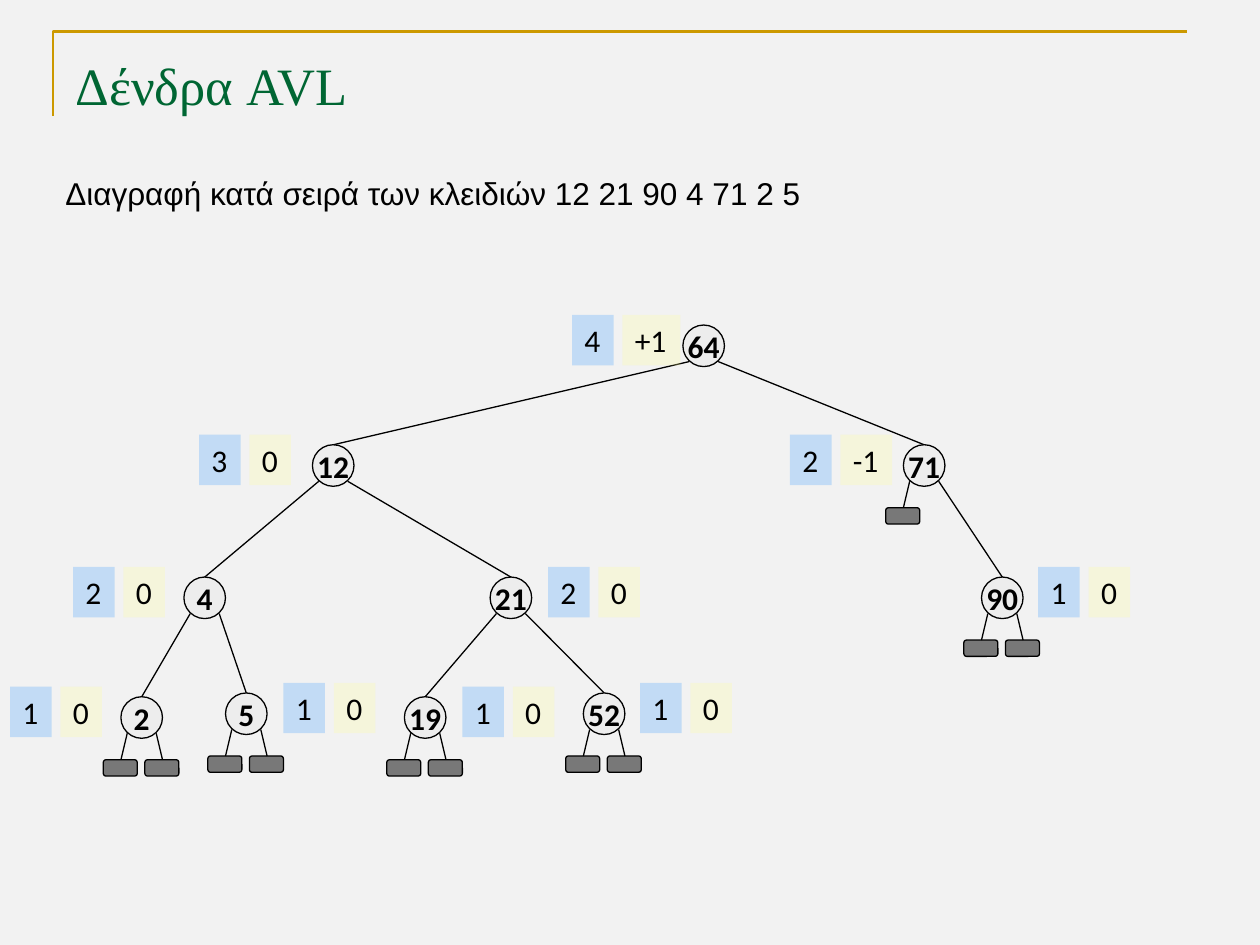
import lxml.etree
import pptx
import pptx.dml.color
import pptx.enum.shapes
import pptx.enum.text
import pptx.oxml.ns
import pptx.util

Inches = pptx.util.Inches
Pt = pptx.util.Pt
qn = pptx.oxml.ns.qn
SHAPE = pptx.enum.shapes.MSO_SHAPE
ALIGN = pptx.enum.text.PP_ALIGN
ANCHOR = pptx.enum.text.MSO_ANCHOR
FIT = pptx.enum.text.MSO_AUTO_SIZE

SIZE, DROP = 0.33, 0.5
FEET = (0.05, 0.28)

# key: left, top, height, balance, tag offset, left child, right child
TREE = {
    "64": (5.34, 0.08, "4", "+1", -0.88, "12", "71"),
    "12": (2.4, 1.03, "3", "0", -0.9, "4", "21"),
    "71": (7.09, 1.03, "2", "-1", -0.9, None, "90"),
    "4": (1.38, 2.08, "2", "0", -0.88, "2", "5"),
    "21": (3.81, 2.08, "2", "0", 0.46, "19", "52"),
    "90": (7.71, 2.08, "1", "0", 0.45, None, None),
    "2": (0.88, 3.03, "1", "0", -0.88, None, None),
    "5": (1.71, 3.0, "1", "0", 0.46, None, None),
    "19": (3.13, 3.03, "1", "0", 0.46, None, None),
    "52": (4.55, 3.0, "1", "0", 0.45, None, None),
}
WIDTHS = {"0": 0.33, "+1": 0.46, "-1": 0.41}


def paint(target, color, alpha=100):
    """Fill a shape, line or background with a hex colour."""
    target.fill.solid()
    target.fill.fore_color.rgb = pptx.dml.color.RGBColor.from_string(color)
    if alpha < 100:
        tone = target._element.spPr.find(qn("a:solidFill"))[0]
        lxml.etree.SubElement(tone, qn("a:alpha")).set("val", str(alpha * 1000))


def write(shape, text, size, face, color="000000", bold=False):
    """Put one line of styled text in a shape."""
    frame = shape.text_frame
    frame.text = text
    frame.word_wrap = False
    font = frame.paragraphs[0].runs[0].font
    font.size, font.name, font.bold = Pt(size), face, bold
    paint(font, color)
    return frame


def block(slide, kind, x, y, w, h, color, alpha, edge=True):
    """Add a filled preset shape."""
    shape = slide.shapes.add_shape(kind, Inches(x), Inches(y), Inches(w), Inches(h))
    shape.shadow.inherit = False
    paint(shape, color, alpha)
    if edge:
        paint(shape.line, "000000")
        shape.line.width = Pt(0.75)
    else:
        shape.line.fill.background()
    return shape


def link(slide, x1, y1, x2, y2):
    """Draw a thin branch between two points."""
    line = slide.shapes.add_connector(
        pptx.enum.shapes.MSO_CONNECTOR.STRAIGHT,
        Inches(x1), Inches(y1), Inches(x2), Inches(y2))
    paint(line.line, "000000")
    line.line.width = Pt(0.75)
    lxml.etree.SubElement(line._element.spPr, qn("a:effectLst"))


def tag(slide, x, y, w, text, color):
    """Add a tinted number beside a node."""
    shape = block(slide, SHAPE.RECTANGLE, x, y, w, 0.4, color, 25, edge=False)
    frame = write(shape, text, 18, "Calibri")
    frame.paragraphs[0].alignment = ALIGN.LEFT
    frame.vertical_anchor = ANCHOR.TOP
    frame.auto_size = FIT.SHAPE_TO_FIT_TEXT


def node(slide, x, y, key, height, poise, shift):
    """Add a round node with its height and balance tags."""
    ball = block(slide, SHAPE.OVAL, x, y, SIZE, SIZE, "EAEAEA", 60)
    frame = write(ball, key, 18, "Calibri", bold=True)
    frame.paragraphs[0].alignment = ALIGN.CENTER
    frame.vertical_anchor = ANCHOR.MIDDLE
    tag(slide, x + shift + 0.4, y - 0.08, WIDTHS[poise], poise, "FFFF99")
    tag(slide, x + shift, y - 0.08, 0.33, height, "3399FF")


def leaf(slide, x, y):
    """Add an empty leaf hung from its top centre."""
    block(slide, SHAPE.ROUNDED_RECTANGLE, x - 0.14, y, 0.27, 0.13, "000000", 50)


def tree(slide, left, top):
    """Draw the branches, leaves and nodes of the tree."""
    for key, (dx, dy, height, poise, shift, *kids) in TREE.items():
        x, y = left + dx, top + dy
        for foot, end, kid in zip(FEET, (0, SIZE), kids):
            if kid:
                tip = left + TREE[kid][0] + SIZE / 2, top + TREE[kid][1]
            else:
                tip = x + end, y + DROP
                leaf(slide, *tip)
            link(slide, x + foot, y + 0.29, *tip)
        node(slide, x, y, key, height, poise, shift)


def label(slide, x, y, w, h, text, size, face, color="000000"):
    """Add a plain text box."""
    box = slide.shapes.add_textbox(Inches(x), Inches(y), Inches(w), Inches(h))
    return write(box, text, size, face, color)


def head(slide, x, y, w, h):
    """Draw the title and its corner rule."""
    pen = slide.shapes.build_freeform(Inches(x), Inches(y + h))
    pen.add_line_segments(
        [(Inches(x), Inches(y)), (Inches(x + w), Inches(y))], close=False)
    rule = pen.convert_to_shape()
    rule.shadow.inherit = False
    rule.fill.background()
    paint(rule.line, "CC9900")
    rule.line.width = Pt(1.5)
    frame = label(slide, x + 0.08, y + 0.05, w, 0.53, "Δένδρα AVL", 30,
                  "Times New Roman", "006633")
    frame.word_wrap = True
    frame.margin_top = Inches(0.12)


def main():
    """Build and save the slide."""
    deck = pptx.Presentation()
    deck.slide_width, deck.slide_height = Inches(10), Inches(7.5)
    slide = deck.slides.add_slide(deck.slide_layouts[6])
    paint(slide.background, "F2F2F2")
    head(slide, 0.42, 0.25, 9, 0.67)
    frame = label(slide, 0.42, 1.33, 6.09, 0.4,
                  "Διαγραφή κατά σειρά των κλειδιών 12 21 90 4 71 2 5", 18, "Arial")
    frame.auto_size = FIT.SHAPE_TO_FIT_TEXT
    tree(slide, 0.08, 2.5)
    deck.save("out.pptx")


if __name__ == "__main__":
    main()
